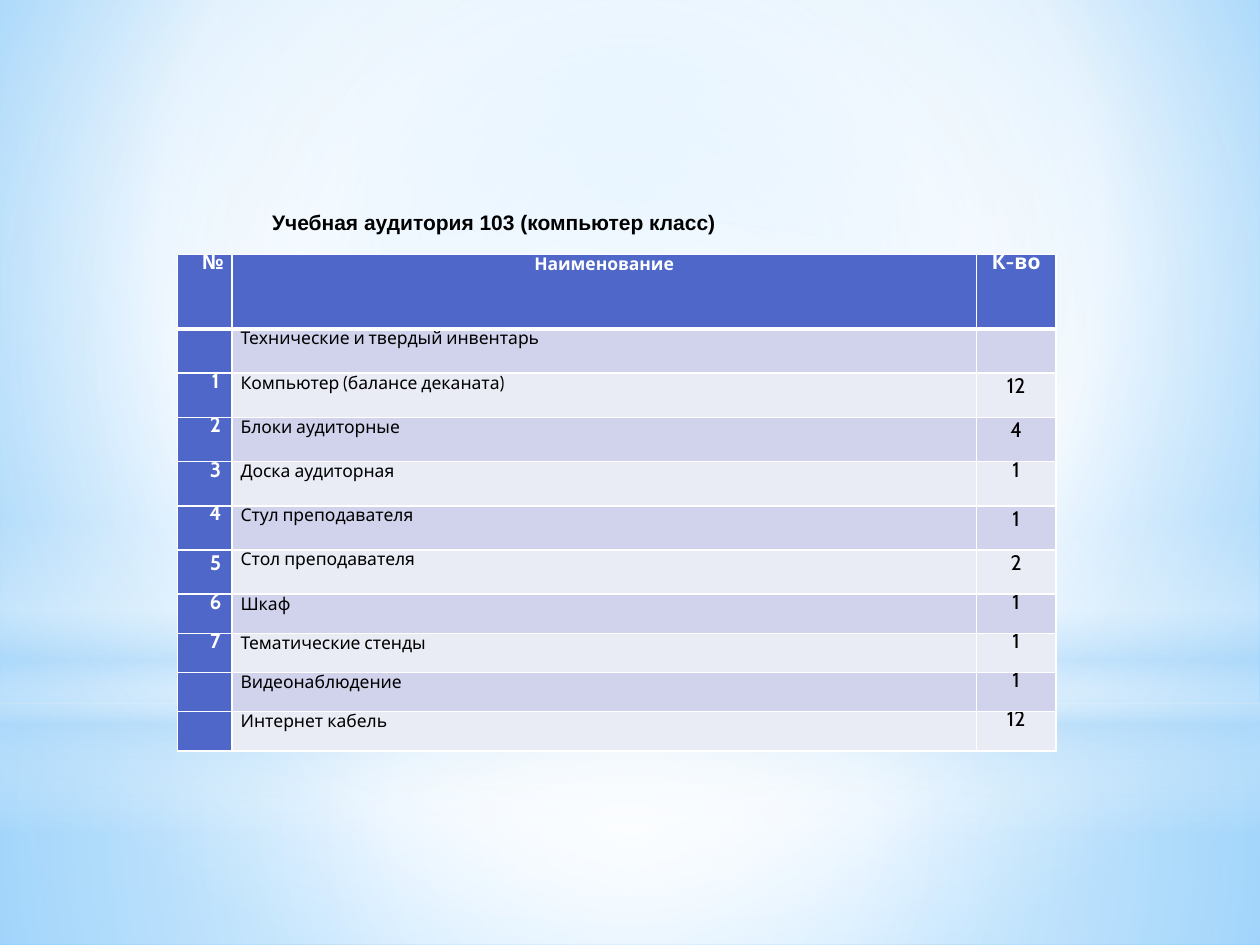
from lxml.etree import SubElement
from pptx import Presentation
from pptx.dml.color import RGBColor
from pptx.enum.shapes import MSO_SHAPE
from pptx.enum.text import MSO_ANCHOR, PP_ALIGN
from pptx.oxml.ns import qn
from pptx.util import Inches, Pt

ACCENT, WHITE, BLACK, SKY = "4E67C8", "FFFFFF", "000000", "B4DCFA"
BANDS = ("D0D3EB", "E9EBF5")
COLUMN_WIDTHS = (0.43, 5.91, 0.63)
ROW_HEIGHTS = (0.59,) + (0.35,) * 6 + (0.31,) * 4
HEADINGS = (("№", 12, 0.13), ("Наименование", 10, 0), ("К-во", 12, 0))
TIGHT = Pt(11.6)
INVENTORY = (
    ("", "Технические и твердый инвентарь", "", TIGHT, TIGHT),
    ("1", "Компьютер (балансе деканата)", "12", TIGHT, None),
    ("2", "Блоки аудиторные", "4", TIGHT, None),
    ("3", "Доска аудиторная", "1", Pt(12.3), Pt(12.3)),
    ("4", "Стул преподавателя", "1", TIGHT, None),
    ("5", "Стол преподавателя", "2", None, None),
    ("6", "Шкаф", "1", TIGHT, TIGHT),
    ("7", "Тематические стенды", "1", TIGHT, TIGHT),
    ("", "Видеонаблюдение", "1", TIGHT, TIGHT),
    ("", "Интернет кабель", "12", TIGHT, TIGHT),
)


def rgb(value):
    """Turn a hex string into a colour."""
    return RGBColor.from_string(value)


def write_text(frame, text, size=12, font="Cabin", color=BLACK, bold=False,
               align=PP_ALIGN.LEFT, indent=0, spacing=None):
    """Write one formatted paragraph into a text frame."""
    paragraph = frame.paragraphs[0]
    paragraph.alignment = align
    paragraph.line_spacing = spacing
    properties = paragraph._p.get_or_add_pPr()
    properties.set("marL", str(Inches(indent)))
    properties.set("indent", "0")
    if text:
        run = paragraph.add_run()
        run.text = text
        run.font.size, run.font.name, run.font.bold = Pt(size), font, bold
        run.font.color.rgb = rgb(color)


def paint_gradient(owner, element, stops, focus=None, angle=90):
    """Fill with (position, colour, opacity) stops, round a focus or along an angle."""
    owner.fill.gradient()
    gradient = element.find(".//" + qn("a:gradFill"))
    gradient.clear()
    gradient.set("rotWithShape", "1")
    stop_list = SubElement(gradient, qn("a:gsLst"))
    for position, color, opacity in stops:
        stop = SubElement(stop_list, qn("a:gs"), pos=str(position * 1000))
        tint = SubElement(stop, qn("a:srgbClr"), val=color)
        if opacity < 100:
            SubElement(tint, qn("a:alpha"), val=str(opacity * 1000))
    if focus:
        circle = SubElement(gradient, qn("a:path"), path="circle")
        sides = {side: str(share * 1000) for side, share in zip("ltrb", focus)}
        SubElement(circle, qn("a:fillToRect"), **sides)
    else:
        SubElement(gradient, qn("a:lin"), ang=str(angle * 60000), scaled="0")


def add_glow(slide, box, stops, focus=(50, 50, 50, 50), kind=MSO_SHAPE.RECTANGLE):
    """Add one borderless gradient shape."""
    glow = slide.shapes.add_shape(kind, *map(Inches, box))
    glow.shadow.inherit = False
    glow.line.fill.background()
    paint_gradient(glow, glow.element, stops, focus)


def add_backdrop(slide, width, height):
    """Paint the blue sky with its horizon and glows."""
    paint_gradient(slide.background, slide.element,
                   ((0, "9ED5FF", 100), (60, WHITE, 100), (100, "5BB9FF", 100)),
                   (20, 10, 20, 60))
    horizon = 5.58
    add_glow(slide, (0, horizon, width, height - horizon),
             ((0, WHITE, 91), (37, WHITE, 76), (100, SKY, 79)))
    add_glow(slide, (0, 0, width, horizon),
             ((0, WHITE, 89), (48, WHITE, 62), (100, SKY, 79)))
    add_glow(slide, (0, 4.12, width, 2.5),
             ((0, WHITE, 0), (29, WHITE, 30), (45, SKY, 40),
              (55, WHITE, 26), (65, SKY, 60), (100, WHITE, 0)), None)
    add_glow(slide, (0, 1.75, width, horizon),
             ((0, WHITE, 100), (56, WHITE, 0)), kind=MSO_SHAPE.OVAL)


def style_cell(cell, fill, top=1, bottom=1):
    """Give a cell white borders, no margins and a fill."""
    properties = cell._tc.get_or_add_tcPr()
    for side, points in (("L", 1), ("R", 1), ("T", top), ("B", bottom)):
        border = SubElement(properties, qn("a:ln" + side), w=str(Pt(points)))
        SubElement(SubElement(border, qn("a:solidFill")), qn("a:srgbClr"), val=WHITE)
    cell.margin_left = cell.margin_top = cell.margin_right = cell.margin_bottom = 0
    cell.fill.solid()
    cell.fill.fore_color.rgb = rgb(fill)


def add_inventory(slide, left, top, width, height):
    """Add the table of classroom equipment."""
    table = slide.shapes.add_table(
        len(ROW_HEIGHTS), len(COLUMN_WIDTHS),
        *map(Inches, (left, top, width, height))).table
    for column, share in zip(table.columns, COLUMN_WIDTHS):
        column.width = Inches(share * width / sum(COLUMN_WIDTHS))
    for row, share in zip(table.rows, ROW_HEIGHTS):
        row.height = Inches(share * height / sum(ROW_HEIGHTS))
    for column, (heading, size, indent) in enumerate(HEADINGS):
        cell = table.cell(0, column)
        style_cell(cell, ACCENT, bottom=3)
        write_text(cell.text_frame, heading, size=size, color=WHITE, bold=True,
                   align=PP_ALIGN.CENTER, indent=indent, spacing=TIGHT)
    for index, entry in enumerate(INVENTORY):
        number, item, quantity, number_spacing, quantity_spacing = entry
        number_cell, item_cell, quantity_cell = table.rows[index + 1].cells
        band, top_border = BANDS[index % 2], 1 if index else 3
        for cell, fill in ((number_cell, ACCENT), (item_cell, band), (quantity_cell, band)):
            style_cell(cell, fill, top=top_border)
        write_text(number_cell.text_frame, number, color=WHITE, bold=True,
                   align=PP_ALIGN.CENTER, indent=0.17, spacing=number_spacing)
        write_text(item_cell.text_frame, item, size=10, indent=0.07, spacing=TIGHT)
        write_text(quantity_cell.text_frame, quantity, align=PP_ALIGN.CENTER,
                   spacing=quantity_spacing)


def place_title(slide, left, top, width, height):
    """Move the title above the table and write it."""
    title = slide.shapes.title
    title.left, title.top, title.width, title.height = map(
        Inches, (left, top, width, height))
    title.element.getparent().append(title.element)
    title.text_frame.word_wrap = True
    title.text_frame.vertical_anchor = MSO_ANCHOR.TOP
    write_text(title.text_frame, "Учебная аудитория 103 (компьютер класс)",
               font="Arial", bold=True, indent=0.65)


def main():
    """Build and save the slide."""
    deck = Presentation()
    deck.slide_width, deck.slide_height = Inches(10), Inches(7.5)
    slide = deck.slides.add_slide(deck.slide_layouts[5])
    add_backdrop(slide, 10, 7.5)
    add_inventory(slide, 1.41, 2.02, 6.97, 3.94)
    place_title(slide, 1.41, 1.61, 6.58, 0.61)
    deck.save("out.pptx")


if __name__ == "__main__":
    main()
